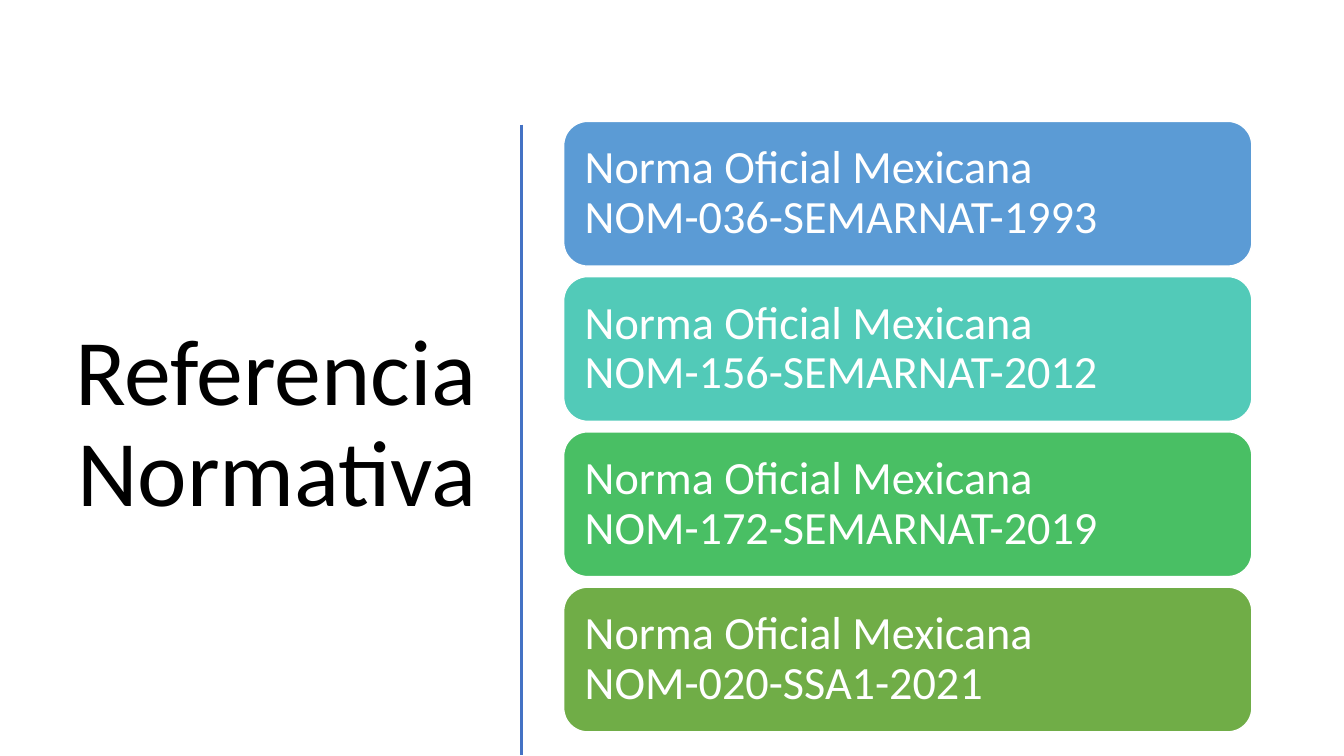
"""Build the slide that lists the Mexican standards of reference."""
from lxml import etree
from pptx import Presentation
from pptx.dml.color import RGBColor as Rgb
from pptx.enum.shapes import MSO_CONNECTOR as Conn, MSO_SHAPE as Kind
from pptx.enum.text import MSO_ANCHOR as Anchor, MSO_AUTO_SIZE as Fit, PP_ALIGN as Align
from pptx.oxml.ns import qn
from pptx.util import Pt

BLACK = Rgb(0x00, 0x00, 0x00)
WHITE = Rgb(0xFF, 0xFF, 0xFF)
BLUE = Rgb(0x44, 0x72, 0xC4)
SKY = Rgb(0x5B, 0x9B, 0xD5)
TEAL = Rgb(0x52, 0xCA, 0xB8)
MINT = Rgb(0x49, 0xBF, 0x64)
GREEN = Rgb(0x70, 0xAD, 0x47)

TITLE = "Referencia Normativa"
NORMS = [
    ("Norma Oficial Mexicana NOM-036-SEMARNAT-1993", SKY),
    ("Norma Oficial Mexicana NOM-156-SEMARNAT-2012", TEAL),
    ("Norma Oficial Mexicana NOM-172-SEMARNAT-2019", MINT),
    ("Norma Oficial Mexicana NOM-020-SSA1-2021", GREEN),
]

LEFT, TOP, WIDTH, HEIGHT, STEP = 402.6, 86.7, 491.6, 103.4, 110.9
RULE = {"x": 372.4, "top": 89, "end": 539.5}
INSET = Pt(10)
FRAME = {"word_wrap": True, "auto_size": Fit.NONE, "vertical_anchor": Anchor.MIDDLE}
CARD = {
    **FRAME,
    "margin_left": INSET,
    "margin_right": INSET,
    "margin_top": INSET,
    "margin_bottom": INSET,
}


def apply(item, values):
    for name, value in values.items():
        setattr(item, name, value)


def write(shape, text, frame, align, size, color):
    body = shape.text_frame
    body.text = text
    apply(body, frame)
    par = body.paragraphs[0]
    apply(par, {"alignment": align, "line_spacing": 0.9})
    apply(par.font, {"name": "Calibri", "size": Pt(size)})
    par.font.color.rgb = color


def add_title(slide):
    title = slide.shapes.title
    apply(title, {"left": Pt(37.4), "top": Pt(84.2), "width": Pt(310.3), "height": Pt(440)})
    write(title, TITLE, FRAME, Align.RIGHT, 67, BLACK)


def add_rule(slide):
    x = Pt(RULE["x"])
    rule = slide.shapes.add_connector(Conn.STRAIGHT, x, Pt(RULE["top"]), x, Pt(RULE["end"]))
    rule.line.color.rgb = BLUE
    rule.line.width = Pt(2)
    etree.SubElement(rule._element.spPr, qn("a:effectLst"))


def add_card(slide, row, text, color):
    top = TOP + row * STEP
    card = slide.shapes.add_shape(Kind.ROUNDED_RECTANGLE, Pt(LEFT), Pt(top), Pt(WIDTH), Pt(HEIGHT))
    card.shadow.inherit = False
    card.fill.solid()
    card.fill.fore_color.rgb = color
    card.line.color.rgb = WHITE
    card.line.width = Pt(1)
    write(card, text, CARD, Align.LEFT, 33, WHITE)


def main():
    deck = Presentation()
    apply(deck, {"slide_width": Pt(960), "slide_height": Pt(540)})
    slide = deck.slides.add_slide(deck.slide_layouts.get_by_name("Title Only"))
    add_title(slide)
    add_rule(slide)
    for row, (text, color) in enumerate(NORMS):
        add_card(slide, row, text, color)
    deck.save("out.pptx")


if __name__ == "__main__":
    main()
